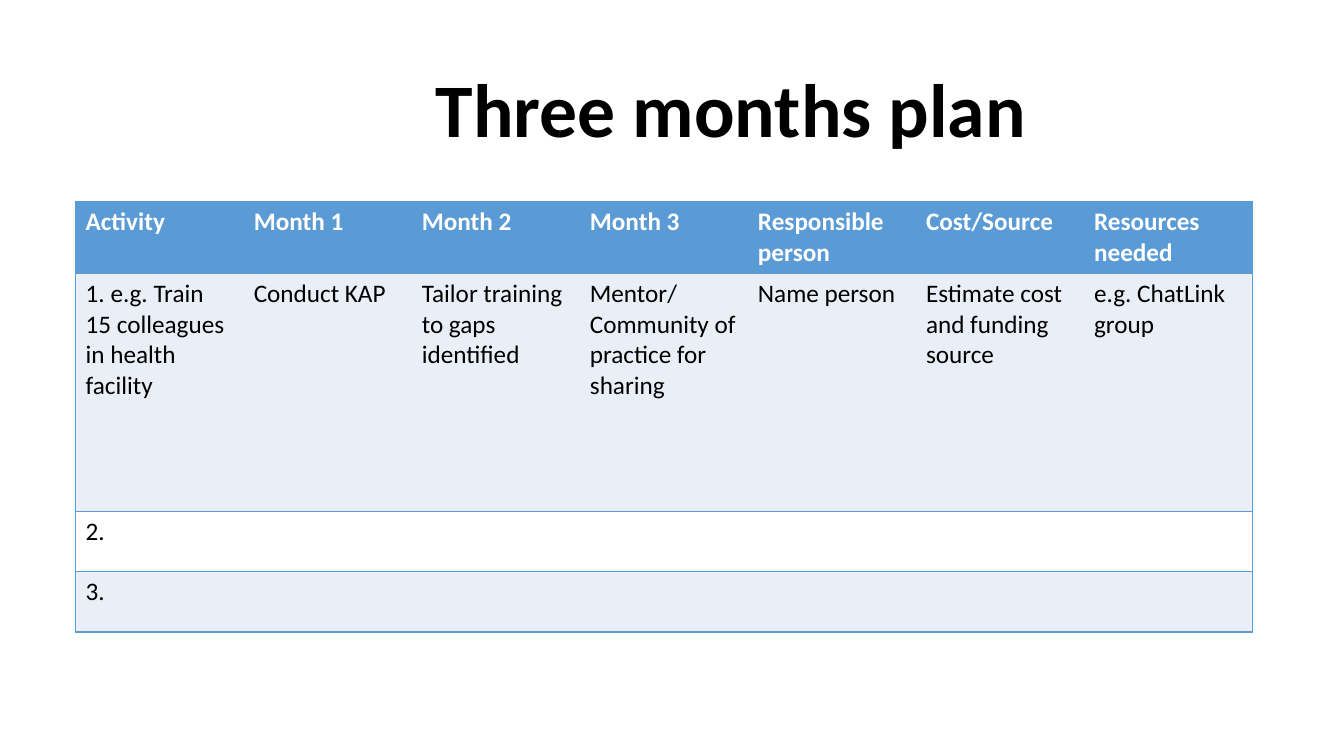
from dataclasses import dataclass

from lxml import etree
from pptx import Presentation
from pptx.dml.color import RGBColor
from pptx.enum.text import MSO_ANCHOR
from pptx.oxml.ns import qn
from pptx.util import Inches, Pt

MIDDLE = MSO_ANCHOR.MIDDLE
TITLE_ONLY = 5

TITLE = "Three months plan"
HEADER = ["Activity", "Month 1", "Month 2", "Month 3",
          "Responsible person", "Cost/Source", "Resources needed"]
ACTIVITIES = [
    ["1. e.g. Train 15 colleagues in health facility", "Conduct KAP",
     "Tailor training to gaps identified",
     "Mentor/Community of practice for sharing", "Name person",
     "Estimate cost and funding source", "e.g. ChatLink group"],
    ["2."],
    ["3."],
]
ROW_HEIGHTS = [0.6, 2.36, 0.6, 0.6]
TITLE_BOX = (2.09, 0.4, 10.32, 1.45)
TABLE_LEFT, TABLE_TOP, TABLE_WIDTH = 0.75, 2, 11.67


@dataclass(frozen=True)
class Theme:
    font: str = "Calibri"
    title_size: int = 54
    cell_size: int = 18
    line_width: int = 1
    text: str = "000000"
    header_text: str = "FFFFFF"
    accent: str = "5B9BD5"
    band: str = "EAEFF7"
    plain: str = "FFFFFF"


THEME = Theme()


def write(tf, text, size=THEME.cell_size, color=THEME.text, bold=False, spacing=None):
    p = tf.paragraphs[0]
    p.line_spacing = spacing
    # The paragraph font keeps the row height of cells without text.
    p.font.size = Pt(size)
    if not text:
        return
    r = p.add_run()
    r.text = text
    r.font.name = THEME.font
    r.font.size = Pt(size)
    r.font.bold = bold
    r.font.color.rgb = RGBColor.from_string(color)


def set_borders(cell, visible):
    """Draw the sides named in visible (L, R, T, B) and hide the others."""
    tc_pr = cell._tc.get_or_add_tcPr()
    for i, side in enumerate("LRTB"):
        ln = etree.Element(qn(f"a:ln{side}"), w=str(Pt(THEME.line_width)))
        if side in visible:
            fill = etree.SubElement(ln, qn("a:solidFill"))
            etree.SubElement(fill, qn("a:srgbClr"), val=THEME.accent)
        else:
            etree.SubElement(ln, qn("a:noFill"))
        tc_pr.insert(i, ln)


def add_title(s):
    title = s.shapes.title
    title.left, title.top, title.width, title.height = map(Inches, TITLE_BOX)
    tf = title.text_frame
    tf.word_wrap = True
    tf.vertical_anchor = MIDDLE
    write(tf, TITLE, size=THEME.title_size, bold=True, spacing=0.9)


def add_plan(s):
    rows = [HEADER, *ACTIVITIES]
    n_cols = len(HEADER)
    table = s.shapes.add_table(
        len(rows), n_cols, Inches(TABLE_LEFT), Inches(TABLE_TOP),
        Inches(TABLE_WIDTH), Inches(sum(ROW_HEIGHTS))).table
    for column in table.columns:
        column.width = Inches(TABLE_WIDTH / n_cols)
    for i, texts in enumerate(rows):
        table.rows[i].height = Inches(ROW_HEIGHTS[i])
        is_header = i == 0
        fill = THEME.accent if is_header else THEME.band if i % 2 else THEME.plain
        for j in range(n_cols):
            cell = table.cell(i, j)
            cell.fill.solid()
            cell.fill.fore_color.rgb = RGBColor.from_string(fill)
            write(cell.text_frame, texts[j] if j < len(texts) else "",
                  color=THEME.header_text if is_header else THEME.text,
                  bold=is_header)
            outer = "L" if j == 0 else "R" if j == n_cols - 1 else ""
            set_borders(cell, "TB" + outer)


def main():
    prs = Presentation()
    prs.slide_width, prs.slide_height = Inches(13.33), Inches(7.5)
    s = prs.slides.add_slide(prs.slide_layouts[TITLE_ONLY])
    add_title(s)
    add_plan(s)
    prs.save("out.pptx")


if __name__ == "__main__":
    main()
